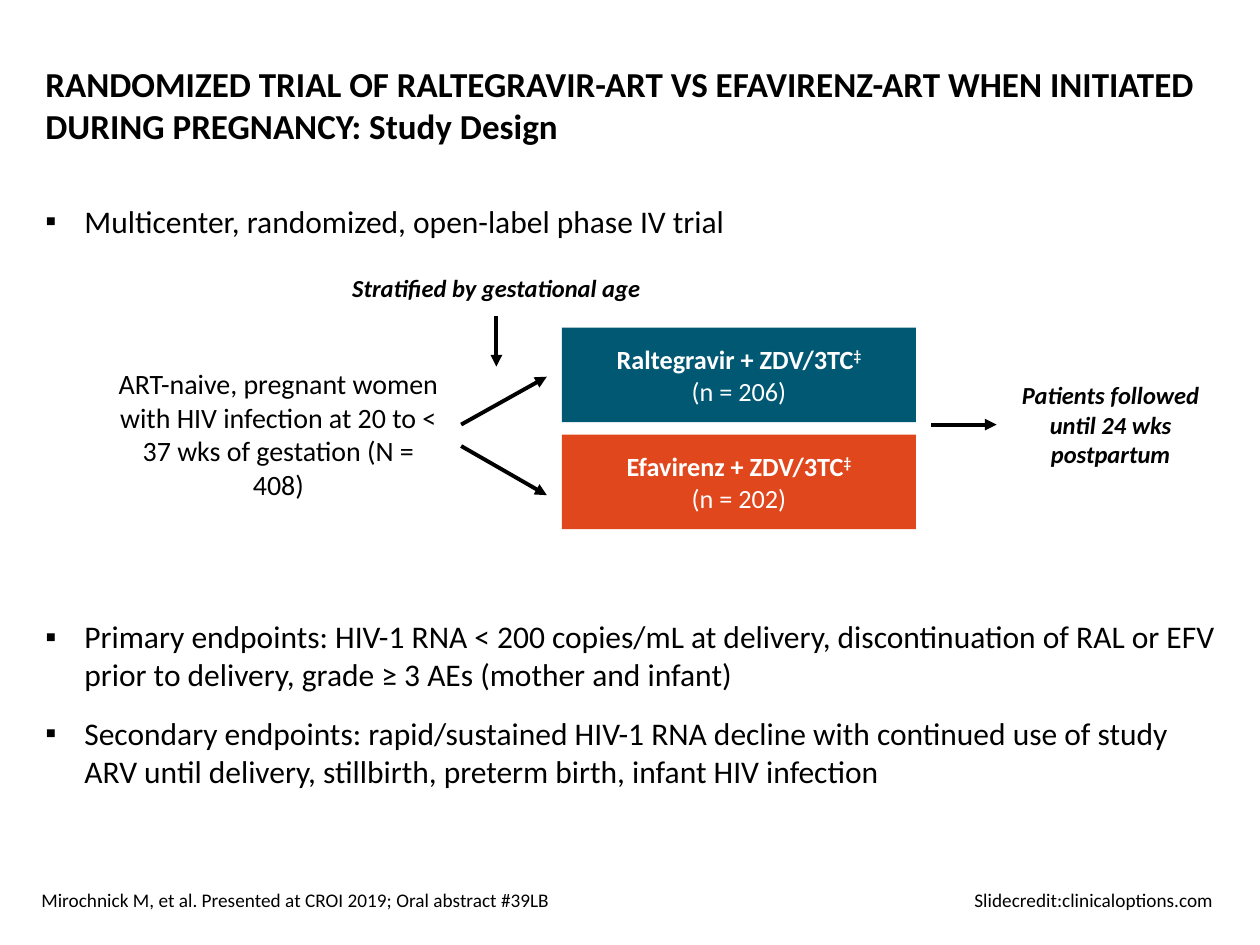
from dataclasses import dataclass

from lxml import etree
from pptx import Presentation
from pptx import util as u
from pptx.dml.color import RGBColor
from pptx.enum import shapes, text
from pptx.oxml.ns import qn


@dataclass(frozen=True)
class Theme:
    font: str = "Calibri"
    ink: str = "000000"
    light: str = "FFFFFF"
    raltegravir: str = "015873"
    efavirenz: str = "E1471D"
    title: int = 20
    body: int = 18
    population: int = 16
    arm: int = 15
    note: int = 14
    footer: int = 11
    arrow: float = 2.25


THEME = Theme()
COLUMNS, ROWS = 100, 75
WIDTH, HEIGHT = u.Inches(10), u.Inches(7.5)
CENTER = text.PP_ALIGN.CENTER
MIDDLE = text.MSO_ANCHOR.MIDDLE


@dataclass(frozen=True)
class Box:
    """A region measured in columns and rows of the slide grid."""
    left: float
    top: float
    width: float
    height: float

    def inner(self, left, top, width, height):
        return Box(self.left + left, self.top + top, width, height)

    def emu(self):
        return (*to_emu(self.left, self.top), *to_emu(self.width, self.height))


def to_emu(column, row):
    return round(WIDTH * column / COLUMNS), round(HEIGHT * row / ROWS)


def add_run(paragraph, words, size, color=THEME.ink, bold=False, italic=False, raised=False):
    run = paragraph.add_run()
    run.text = words
    font = run.font
    font.name, font.size = THEME.font, u.Pt(size)
    font.bold, font.italic = bold, italic
    font.color.rgb = RGBColor.from_string(color)
    if raised:
        run._r.get_or_add_rPr().set("baseline", "30000")


def move(shape, box):
    shape.left, shape.top, shape.width, shape.height = box.emu()


def add_text(slide, box, words, size, align=CENTER, anchor=text.MSO_ANCHOR.TOP, **style):
    frame = slide.shapes.add_textbox(*box.emu()).text_frame
    frame.word_wrap = True
    frame.vertical_anchor = anchor
    paragraph = frame.paragraphs[0]
    paragraph.alignment = align
    add_run(paragraph, words, size, **style)
    return paragraph


def add_arrow(slide, box, start, end):
    points = [to_emu(box.left + x, box.top + y) for x, y in (start, end)]
    arrow = slide.shapes.add_connector(shapes.MSO_CONNECTOR.STRAIGHT, *points[0], *points[1])
    arrow.line.color.rgb = RGBColor.from_string(THEME.ink)
    arrow.line.width = u.Pt(THEME.arrow)
    properties = arrow._element.spPr
    etree.SubElement(properties.get_or_add_ln(), qn("a:tailEnd"), type="triangle")
    etree.SubElement(properties, qn("a:effectLst"))


def fill_title(slide, box):
    title = slide.shapes.title
    move(title, box)
    frame = title.text_frame
    frame.auto_size = text.MSO_AUTO_SIZE.NONE
    frame.vertical_anchor = MIDDLE
    paragraph = frame.paragraphs[0]
    paragraph.alignment = text.PP_ALIGN.LEFT
    add_run(paragraph, "RANDOMIZED TRIAL OF RALTEGRAVIR-ART VS EFAVIRENZ-ART WHEN INITIATED "
            "DURING PREGNANCY: Study Design", THEME.title, bold=True)


def fill_body(slide, box):
    body = slide.placeholders[1]
    move(body, box)
    frame = body.text_frame
    frame.auto_size = text.MSO_AUTO_SIZE.NONE
    # Each point with the space before it; the second leaves room for the diagram
    points = [
        ("Multicenter, randomized, open-label phase IV trial", 0),
        ("Primary endpoints: HIV-1 RNA < 200 copies/mL at delivery, discontinuation of RAL "
         "or EFV prior to delivery, grade ≥ 3 AEs (mother and infant)", 216),
        ("Secondary endpoints: rapid/sustained HIV-1 RNA decline with continued use of study "
         "ARV until delivery, stillbirth, preterm birth, infant HIV infection", 12),
    ]
    indent = u.Inches(0.31)
    for index, (words, space) in enumerate(points):
        paragraph = frame.paragraphs[0] if index == 0 else frame.add_paragraph()
        properties = paragraph._p.get_or_add_pPr()
        properties.set("marL", str(indent))
        properties.set("indent", str(-indent))
        etree.SubElement(properties, qn("a:buChar"), char="▪")
        paragraph.space_before = u.Pt(space)
        add_run(paragraph, words, THEME.body)


def add_arm(slide, box, drugs, count, color):
    shape = slide.shapes.add_shape(shapes.MSO_SHAPE.RECTANGLE, *box.emu())
    shape.shadow.inherit = False
    shape.fill.solid()
    shape.fill.fore_color.rgb = RGBColor.from_string(color)
    shape.line.fill.background()
    frame = shape.text_frame
    frame.word_wrap = False
    frame.vertical_anchor = MIDDLE
    name, size = frame.paragraphs[0], frame.add_paragraph()
    name.alignment = size.alignment = CENTER
    add_run(name, drugs, THEME.arm, THEME.light, bold=True)
    add_run(name, "‡", THEME.arm, THEME.light, bold=True, raised=True)
    add_run(size, count, THEME.arm, THEME.light)


def add_diagram(slide, box):
    # Population and stratification
    add_text(slide, box.inner(0, 7.4, 27.6, 11.8),
             "ART-naive, pregnant women with HIV infection at 20 to < 37 wks of gestation (N = 408)",
             THEME.population)
    add_text(slide, box.inner(16.6, 0, 29, 3.4), "Stratified by gestational age",
             THEME.note, bold=True, italic=True)

    # Treatment arms
    arms = [("Raltegravir + ZDV/3TC", "(n = 206)", THEME.raltegravir),
            ("Efavirenz + ZDV/3TC", "(n = 202)", THEME.efavirenz)]
    for index, arm in enumerate(arms):
        add_arm(slide, box.inner(36.3, 4.8 + 8.5 * index, 28.1, 7.5), *arm)

    # Follow-up
    add_text(slide, box.inner(70.8, 8.5, 18.1, 8.1), "Patients followed until 24 wks postpartum",
             THEME.note, bold=True, italic=True)

    # Flow: stratification, the two arms, follow-up
    for start, end in [((31.1, 3.9), (31.1, 7.9)),
                       ((28.3, 12.5), (35.1, 8.7)),
                       ((28.3, 14.2), (35.1, 18.1)),
                       ((65.6, 12.5), (70.8, 12.5))]:
        add_arrow(slide, box, start, end)


def add_footer(slide, box):
    paragraph = add_text(
        slide, box,
        "Mirochnick M, et al. Presented at CROI 2019; Oral abstract #39LB"
        "\tSlidecredit:clinicaloptions.com",
        THEME.footer, align=text.PP_ALIGN.LEFT, anchor=MIDDLE)
    tabs = etree.SubElement(paragraph._p.get_or_add_pPr(), qn("a:tabLst"))
    etree.SubElement(tabs, qn("a:tab"), pos=str(u.Inches(9.3)), algn="r")


def main():
    presentation = Presentation()
    presentation.slide_width, presentation.slide_height = WIDTH, HEIGHT
    slide = presentation.slides.add_slide(presentation.slide_layouts[1])
    fill_title(slide, Box(2.6, 3.6, 95.3, 9.4))
    fill_body(slide, Box(2.6, 15.5, 95.3, 52))
    add_footer(slide, Box(2.3, 69.4, 95.3, 4))
    add_diagram(slide, Box(8.3, 21.2, 88.9, 20.8))
    presentation.save("out.pptx")


if __name__ == "__main__":
    main()
